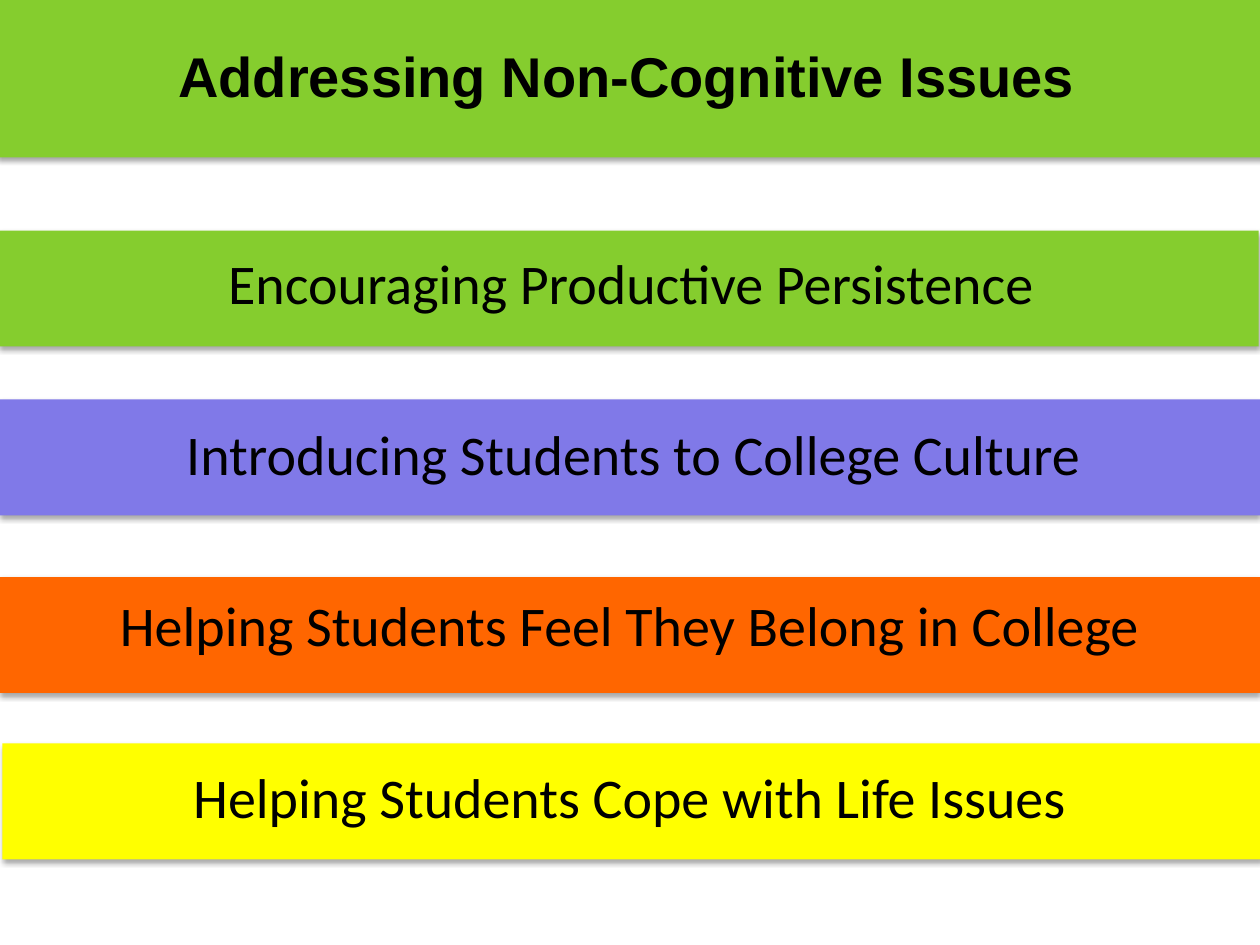
import pptx
import pptx.util
import pptx.dml.color
import pptx.enum.shapes
import pptx.enum.text
import pptx.oxml.ns
from lxml import etree

# Content
COLORS = {"green": "85CD2E", "violet": "8079E8", "orange": "FF6600",
          "yellow": "FFFF00", "black": "000000"}
TITLE = "Addressing Non-Cognitive Issues"
# wording, colour, band left and top, text left and top
ISSUES = [
    ("Encouraging Productive Persistence", "green", (-0.01, 1.83), (0.01, 1.92)),
    ("Introducing Students to College Culture", "violet", (0, 3.17), (0.03, 3.28)),
    ("Helping Students Feel They Belong in College", "orange", (0, 4.58), (0, 4.64)),
    ("Helping Students Cope with Life Issues", "yellow", (0.02, 5.9), (0, 6)),
]

# Layout, in inches
W, H = 10, 7.5
BAND_H, LABEL_H = 0.92, 0.64
SHADOW = {"blur": 3.1, "dist": 1.8, "angle": 90, "alpha": 35}


def rgb(name):
    return pptx.dml.color.RGBColor.from_string(COLORS[name])


def inches(*box):
    return [pptx.util.Inches(v) for v in box]


def add_band(shapes, box, color):
    sp = shapes.add_shape(pptx.enum.shapes.MSO_SHAPE.RECTANGLE, *inches(*box))
    sp.fill.solid()
    sp.fill.fore_color.rgb = rgb(color)
    sp.line.fill.background()
    sp.shadow.inherit = False
    # Soft shadow below the band
    qn = pptx.oxml.ns.qn
    effects = sp._element.spPr.find(qn("a:effectLst"))
    outer = etree.SubElement(
        effects, qn("a:outerShdw"),
        blurRad=str(pptx.util.Pt(SHADOW["blur"])),
        dist=str(pptx.util.Pt(SHADOW["dist"])),
        dir=str(SHADOW["angle"] * 60000), rotWithShape="0")
    clr = etree.SubElement(outer, qn("a:srgbClr"), val=COLORS["black"])
    etree.SubElement(clr, qn("a:alpha"), val=str(SHADOW["alpha"] * 1000))


def add_label(shapes, box, text, font, bold=False):
    tf = shapes.add_textbox(*inches(*box)).text_frame
    tf.word_wrap = True
    p = tf.paragraphs[0]
    p.alignment = pptx.enum.text.PP_ALIGN.CENTER
    r = p.add_run()
    r.text = text
    r.font.name = font
    r.font.size = pptx.util.Pt(32)
    r.font.bold = bold
    r.font.color.rgb = rgb("black")
    return tf


prs = pptx.Presentation()
prs.slide_width, prs.slide_height = inches(W, H)
s = prs.slides.add_slide(prs.slide_layouts[6])

# Title band
add_band(s.shapes, (-0.02, 0, 10.33, 1.25), "green")
tf = add_label(s.shapes, (0.58, 0.33, 8.79, 0.38), TITLE, "Arial", bold=True)
tf.margin_left = tf.margin_right = tf.margin_top = tf.margin_bottom = 0

# One group of band and label per issue
for text, color, band_at, label_at in ISSUES:
    group = s.shapes.add_group_shape()
    add_band(group.shapes, (*band_at, W, BAND_H), color)
    tf = add_label(group.shapes, (*label_at, W, LABEL_H), text, "Calibri")
    tf.auto_size = pptx.enum.text.MSO_AUTO_SIZE.SHAPE_TO_FIT_TEXT

prs.save("out.pptx")
